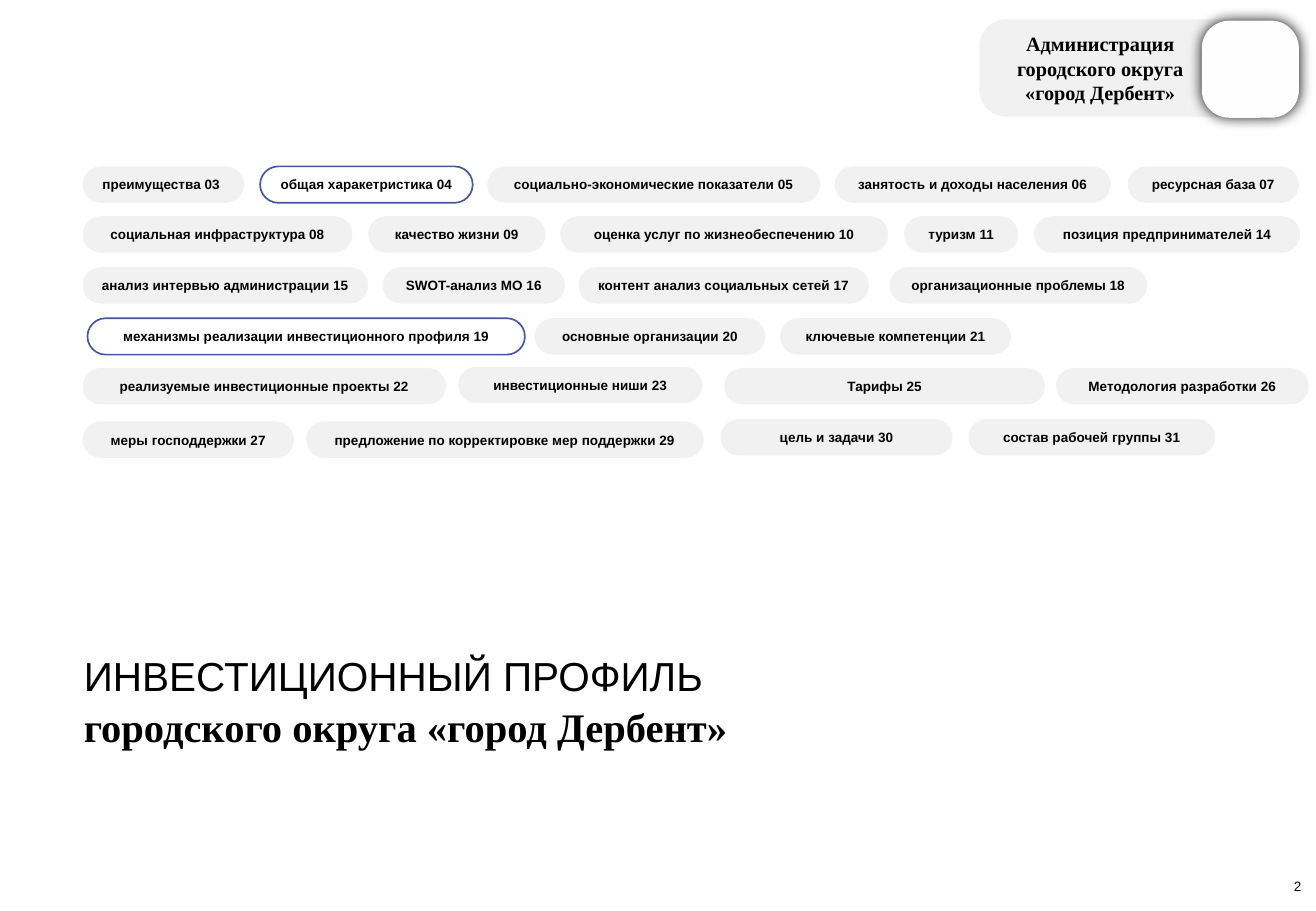
from typing import NamedTuple

from lxml import etree
from pptx import Presentation
from pptx import util as u
from pptx.dml import color
from pptx.enum import shapes, text
from pptx.oxml import ns

SCALE = 9144
INK, GREY, BLUE, PALE = "000000", "F1F1F1", "4756A0", "FEFEFE"
SANS, SERIF = "Arial", "Times New Roman"
HIGH = 30
ALIGN = text.PP_ALIGN
ANCHOR = text.MSO_ANCHOR


class Pill(NamedTuple):
    label: str
    left: int
    wide: int
    shift: int = 0
    marked: bool = False
    pad: int = 0


class Row(NamedTuple):
    top: int
    pills: list[Pill]


ROWS = [
    Row(137, [
        Pill("преимущества 03", 68, 133, pad=12),
        Pill("общая харакетристика 04", 214, 175, marked=True),
        Pill("социально-экономические показатели 05", 401, 274),
        Pill("занятость и доходы населения 06", 687, 227),
        Pill("ресурсная база 07", 928, 141),
    ]),
    Row(178, [
        Pill("социальная инфраструктура 08", 68, 222),
        Pill("качество жизни 09", 303, 146),
        Pill("оценка услуг по жизнеобеспечению 10", 461, 270),
        Pill("туризм 11", 744, 94),
        Pill("позиция предпринимателей 14", 851, 219),
    ]),
    Row(220, [
        Pill("анализ интервью администрации 15", 68, 235),
        Pill("SWOT-анализ МО 16", 315, 150),
        Pill("контент анализ социальных сетей 17", 476, 239),
        Pill("организационные проблемы 18", 732, 212),
    ]),
    Row(262, [
        Pill("механизмы реализации инвестиционного профиля 19", 72, 360, marked=True),
        Pill("основные организации 20", 440, 190),
        Pill("ключевые компетенции 21", 642, 190),
    ]),
    Row(303, [
        Pill("реализуемые инвестиционные проекты 22", 68, 299),
        Pill("инвестиционные ниши 23", 377, 201, shift=-1),
        Pill("Тарифы 25", 596, 264),
        Pill("Методология разработки 26", 869, 208),
    ]),
    Row(347, [
        Pill("меры господдержки 27", 68, 174),
        Pill("предложение по корректировке мер поддержки 29", 252, 327),
        Pill("цель и задачи 30", 593, 191, shift=-2),
        Pill("состав рабочей группы 31", 797, 203, shift=-2),
    ]),
]


def px(n: int) -> u.Emu:
    return u.Emu(n * SCALE)


def rgb(code: str) -> color.RGBColor:
    return color.RGBColor.from_string(code)


def block(slide, left: int, top: int, wide: int, high: int, curve: float,
          fill: str | None = None, line: str | None = None):
    shape = slide.shapes.add_shape(
        shapes.MSO_SHAPE.ROUNDED_RECTANGLE, px(left), px(top), px(wide), px(high))
    shape.adjustments[0] = curve
    shape.shadow.inherit = False
    if fill:
        shape.fill.solid()
        shape.fill.fore_color.rgb = rgb(fill)
    else:
        shape.fill.background()
    if line:
        shape.line.color.rgb = rgb(line)
        shape.line.width = u.Pt(1)
    else:
        shape.line.fill.background()
    return shape


def write(shape, words: str, *, size: int = 8, font: str = SANS, bold: bool = False,
          align=ALIGN.CENTER, anchor=ANCHOR.MIDDLE, pads=(0, 0, 0, 0),
          space: float | None = None) -> None:
    frame = shape.text_frame
    frame.word_wrap = True
    frame.vertical_anchor = anchor
    (frame.margin_left, frame.margin_top,
     frame.margin_right, frame.margin_bottom) = map(px, pads)
    para = frame.add_paragraph() if frame.text else frame.paragraphs[0]
    para.alignment = align
    para.line_spacing = space
    run = para.add_run()
    run.text = words
    run.font.size = u.Pt(size)
    run.font.name = font
    run.font.bold = bold
    run.font.color.rgb = rgb(INK)


def draw(slide, pill: Pill, top: int) -> None:
    shape = block(slide, pill.left, top + pill.shift, pill.wide, HIGH, 0.5,
                  fill=None if pill.marked else GREY,
                  line=BLUE if pill.marked else None)
    write(shape, pill.label, bold=True, pads=(pill.pad, 0, 0, 0),
          align=ALIGN.LEFT if pill.pad else ALIGN.CENTER)


def glow(shape, blur: float, alpha: int) -> None:
    effects = shape.element.spPr.find(ns.qn("a:effectLst"))
    shade = etree.SubElement(effects, ns.qn("a:outerShdw"),
                             blurRad=str(u.Pt(blur)), dist="0", dir="0",
                             algn="ctr", rotWithShape="0")
    tint = etree.SubElement(shade, ns.qn("a:srgbClr"), val=INK)
    etree.SubElement(tint, ns.qn("a:alpha"), val=str(alpha * 1000))


def field(slide, left: int, top: int, wide: int, high: int):
    return slide.shapes.add_textbox(px(left), px(top), px(wide), px(high))


def main() -> None:
    deck = Presentation()
    deck.slide_width, deck.slide_height = px(1083), px(750)
    slide = deck.slides.add_slide(deck.slide_layouts[6])

    for row in ROWS:
        for pill in row.pills:
            draw(slide, pill, row.top)

    write(field(slide, 991, 723, 80, 13), "2", align=ALIGN.RIGHT, anchor=ANCHOR.BOTTOM)

    title = field(slide, 69, 534, 800, 81)
    for words, font, bold in [
        ("ИНВЕСТИЦИОННЫЙ ПРОФИЛЬ", SANS, False),
        ("городского округа «город Дербент»", SERIF, True),
    ]:
        write(title, words, size=24, font=font, bold=bold,
              align=ALIGN.LEFT, anchor=ANCHOR.TOP, space=1.05)

    badge = block(slide, 806, 16, 262, 80, 0.275, fill=GREY)
    write(badge, "Администрация городского округа «город Дербент»",
          size=12, font=SERIF, bold=True, pads=(16, 5, 79, 5))
    glow(block(slide, 989, 17, 80, 80, 0.286, fill=PALE), 8.4, 92)

    deck.save("out.pptx")


if __name__ == "__main__":
    main()
